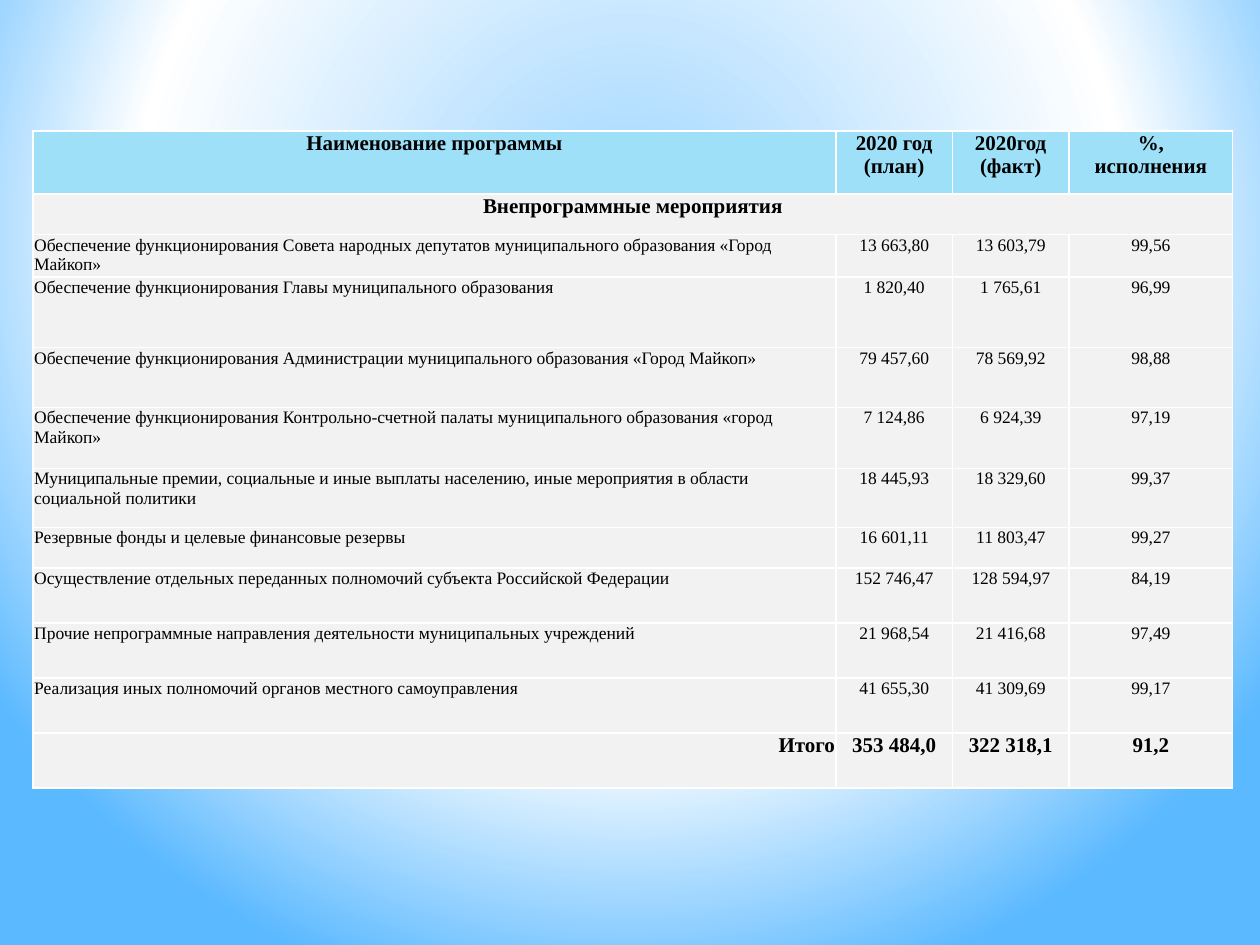
"""Build a slide with a table of non-programme budget spending for 2020."""
from copy import deepcopy

from lxml import etree
from pptx import Presentation
from pptx import util as u
from pptx.dml.color import RGBColor
from pptx.enum import text
from pptx.oxml.ns import nsdecls, qn

HEAD = ("Наименование программы", "2020 год\n(план)", "2020год\n(факт)", "%,\nисполнения")
GROUP = ("Внепрограммные мероприятия", "", "", "")
ITEMS = [
    ("Обеспечение функционирования Совета народных депутатов муниципального образования «Город Майкоп»",
     "13 663,80", "13 603,79", "99,56"),
    ("Обеспечение функционирования Главы муниципального образования",
     "1 820,40", "1 765,61", "96,99"),
    ("Обеспечение функционирования Администрации муниципального образования «Город Майкоп»",
     "79 457,60", "78 569,92", "98,88"),
    ("Обеспечение функционирования Контрольно-счетной палаты муниципального образования «город Майкоп»",
     "7 124,86", "6 924,39", "97,19"),
    ("Муниципальные премии, социальные и иные выплаты населению, иные мероприятия в области социальной политики",
     "18 445,93", "18 329,60", "99,37"),
    ("Резервные фонды и целевые финансовые резервы",
     "16 601,11", "11 803,47", "99,27"),
    ("Осуществление отдельных переданных полномочий субъекта Российской Федерации",
     "152 746,47", "128 594,97", "84,19"),
    ("Прочие непрограммные направления деятельности муниципальных учреждений",
     "21 968,54", "21 416,68", "97,49"),
    ("Реализация иных полномочий органов местного самоуправления",
     "41 655,30", "41 309,69", "99,17"),
]
TOTAL = ("Итого", "353 484,0", "322 318,1", "91,2")

THEME = {
    "font": "Times New Roman", "ink": "000000", "head": "9EE0F8", "body": "F2F2F2",
    "line": "FFFFFF", "big": 12, "small": 10,
    "glow": [(0, "9ED5FF"), (63, "FFFFFF"), (100, "5BB9FF")],
}
LEFT, TOP = 0.67, 2.64
COLS = [16.18, 2.35, 2.35, 3.3]
ROWS = [1.27, 0.82, 0.85, 1.43, 1.2, 1.23, 1.19, 0.82] + [1.11] * 4
INSET = {"margin_left": u.Cm(0.02), "margin_right": u.Cm(0.02),
         "margin_top": u.Cm(0.02), "margin_bottom": 0}
ALIGN = text.PP_ALIGN


def assign(item, values):
    """Set each named attribute on the item."""
    for name, value in values.items():
        setattr(item, name, value)


def paint(slide):
    """Give the slide its round gradient background."""
    stops = "".join(f'<a:gs pos="{pos * 1000}"><a:srgbClr val="{hue}"/></a:gs>'
                    for pos, hue in THEME["glow"])
    back = etree.fromstring(
        f'<p:bg {nsdecls("p", "a")}><p:bgPr><a:gradFill rotWithShape="1"><a:gsLst>{stops}</a:gsLst>'
        '<a:path path="circle"><a:fillToRect l="20000" t="10000" r="20000" b="60000"/></a:path>'
        '</a:gradFill><a:effectLst/></p:bgPr></p:bg>')
    slide.element.cSld.insert(0, back)


def frame(cell):
    """Draw a thin line on all four sides of the cell."""
    props = cell._tc.get_or_add_tcPr()
    for spot, side in enumerate(("lnL", "lnR", "lnT", "lnB")):
        props.insert(spot, etree.fromstring(
            f'<a:{side} {nsdecls("a")} w="12700"><a:solidFill>'
            f'<a:srgbClr val="{THEME["line"]}"/></a:solidFill></a:{side}>'))


def fill(cell, words, hue, align, size, bold):
    """Write and format one table cell."""
    assign(cell, INSET)
    cell.fill.solid()
    cell.fill.fore_color.rgb = RGBColor.from_string(hue)
    frame(cell)
    para = cell.text_frame.paragraphs[0]
    assign(para, {"text": words, "alignment": align})
    for font in (para.font, *(run.font for run in para.runs)):
        assign(font, {"name": THEME["font"], "size": u.Pt(size), "bold": bold})
        font.color.rgb = RGBColor.from_string(THEME["ink"])
    for gap in para._p.findall(qn("a:br")):
        gap.insert(0, deepcopy(para.runs[0].font._element))


def main():
    """Lay out the slide and save it."""
    deck = Presentation()
    assign(deck, {"slide_width": u.Cm(25.4), "slide_height": u.Cm(19.05)})
    slide = deck.slides.add_slide(deck.slide_layouts[6])
    paint(slide)
    data = [HEAD, GROUP, *ITEMS, TOTAL]
    grid = slide.shapes.add_table(len(ROWS), len(COLS), u.Cm(LEFT), u.Cm(TOP),
                                  u.Cm(sum(COLS)), u.Cm(sum(ROWS))).table
    assign(grid, {"first_row": False, "horz_banding": False})
    for col, width in zip(grid.columns, COLS):
        col.width = u.Cm(width)
    for row, height, words in zip(grid.rows, ROWS, data):
        row.height = u.Cm(height)
        bold = words in (HEAD, GROUP, TOTAL)
        hue = THEME["head" if words is HEAD else "body"]
        first = ALIGN.RIGHT if words is TOTAL else ALIGN.CENTER if bold else ALIGN.LEFT
        for spot, (cell, word) in enumerate(zip(row.cells, words)):
            fill(cell, word, hue, ALIGN.CENTER if spot else first,
                 THEME["big" if bold else "small"], bold)
    grid.cell(1, 0).merge(grid.cell(1, len(COLS) - 1))
    deck.save("out.pptx")


if __name__ == "__main__":
    main()
